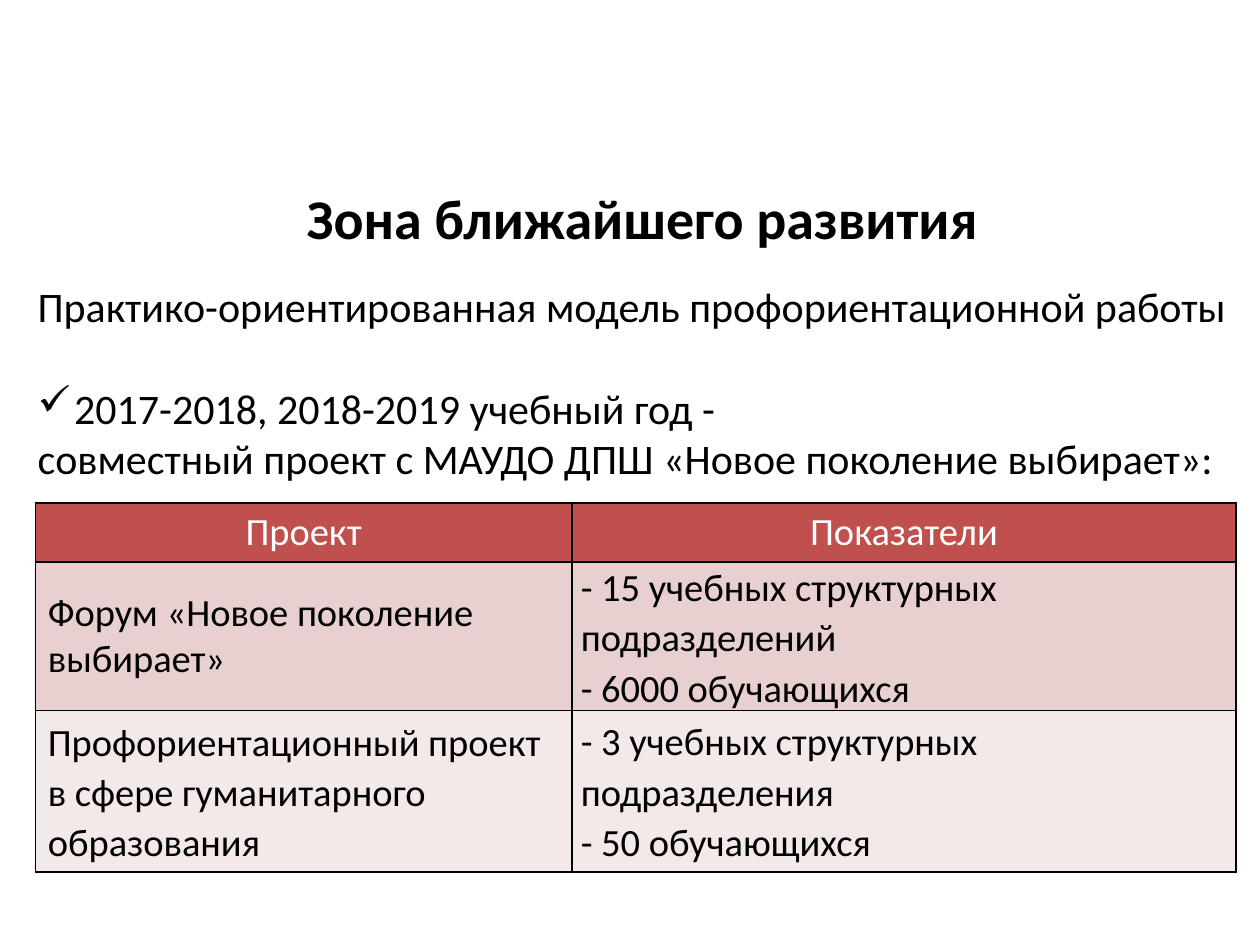
from lxml.etree import SubElement
from pptx import Presentation
from pptx.dml.color import RGBColor
from pptx.enum.text import MSO_ANCHOR, PP_ALIGN
from pptx.oxml.ns import qn
from pptx.util import Inches, Pt

COLORS = {"text": "000000", "header_text": "FFFFFF", "header": "C0504D",
          "band_dark": "E8D0D0", "band_light": "F4E9E9", "border": "000000"}
FONT = "Calibri"

deck = Presentation()
deck.slide_width, deck.slide_height = Inches(10), Inches(7.5)
page = deck.slides.add_slide(deck.slide_layouts[6])
# One percent of the slide's width and height
column, row = deck.slide_width / 100, deck.slide_height / 100


def write_lines(frame, lines, size, color, align=PP_ALIGN.LEFT, bold=False):
    frame.word_wrap = True
    frame.text = "\n".join(lines)
    for para in frame.paragraphs:
        para.alignment = align
        for span in para.runs:
            span.font.name = FONT
            span.font.size = Pt(size)
            span.font.bold = bold
            span.font.color.rgb = RGBColor.from_string(COLORS[color])


def add_borders(cell):
    properties = cell._tc.get_or_add_tcPr()
    for position, side in enumerate(("a:lnL", "a:lnR", "a:lnT", "a:lnB")):
        line = properties.makeelement(qn(side), {"w": str(Pt(1))})
        fill = SubElement(line, qn("a:solidFill"))
        SubElement(fill, qn("a:srgbClr"), val=COLORS["border"])
        properties.insert(position, line)


# Heading
title = page.shapes.add_textbox(int(2 * column), int(18.8 * row),
                                int(98 * column), int(8.53 * row))
write_lines(title.text_frame, ["Зона ближайшего развития"], 32, "text",
            PP_ALIGN.CENTER, bold=True)

# Introduction
intro = page.shapes.add_textbox(int(2 * column), int(29.07 * row),
                                int(98 * column), int(24.13 * row))
write_lines(intro.text_frame, [
    "Практико-ориентированная модель профориентационной работы",
    "2017-2018, 2018-2019 учебный год -",
    "совместный проект с МАУДО ДПШ «Новое поколение выбирает»:",
], 24, "text")
years = intro.text_frame.paragraphs[1]
years.space_before = Pt(29)
indent = int(2.9 * column)
years_properties = years._p.get_or_add_pPr()
years_properties.set("marL", str(indent))
years_properties.set("indent", str(-indent))
SubElement(years_properties, qn("a:buChar"), char="✓")

# Projects and their indicators
projects = [
    (6.27, "header", "header_text", ["Проект"], ["Показатели"]),
    (15.73, "band_dark", "text", ["Форум «Новое поколение выбирает»"],
     ["- 15 учебных структурных подразделений", "- 6000 обучающихся"]),
    (17.07, "band_light", "text",
     ["Профориентационный проект в сфере гуманитарного образования"],
     ["- 3 учебных структурных подразделения", "- 50 обучающихся"]),
]
widths = (42.6, 52.7)
table = page.shapes.add_table(
    len(projects), len(widths), int(2.8 * column), int(53.2 * row),
    int(sum(widths) * column), int(sum(entry[0] for entry in projects) * row)).table
for index, width in enumerate(widths):
    table.columns[index].width = int(width * column)

for row_index, (height, fill, color, *texts) in enumerate(projects):
    table.rows[row_index].height = int(height * row)
    is_header = row_index == 0
    for column_index, lines in enumerate(texts):
        cell = table.cell(row_index, column_index)
        cell.fill.solid()
        cell.fill.fore_color.rgb = RGBColor.from_string(COLORS[fill])
        add_borders(cell)
        write_lines(cell.text_frame, lines, 22, color,
                    PP_ALIGN.CENTER if is_header else PP_ALIGN.LEFT)
        if is_header:
            continue
        cell.vertical_anchor = MSO_ANCHOR.MIDDLE
        if column_index == 1:
            cell.margin_left = cell.margin_right = int(0.7 * column)
            cell.margin_top = cell.margin_bottom = 0
        if (row_index, column_index) != (1, 0):
            for para in cell.text_frame.paragraphs:
                para.line_spacing = 1.07

deck.save("out.pptx")
